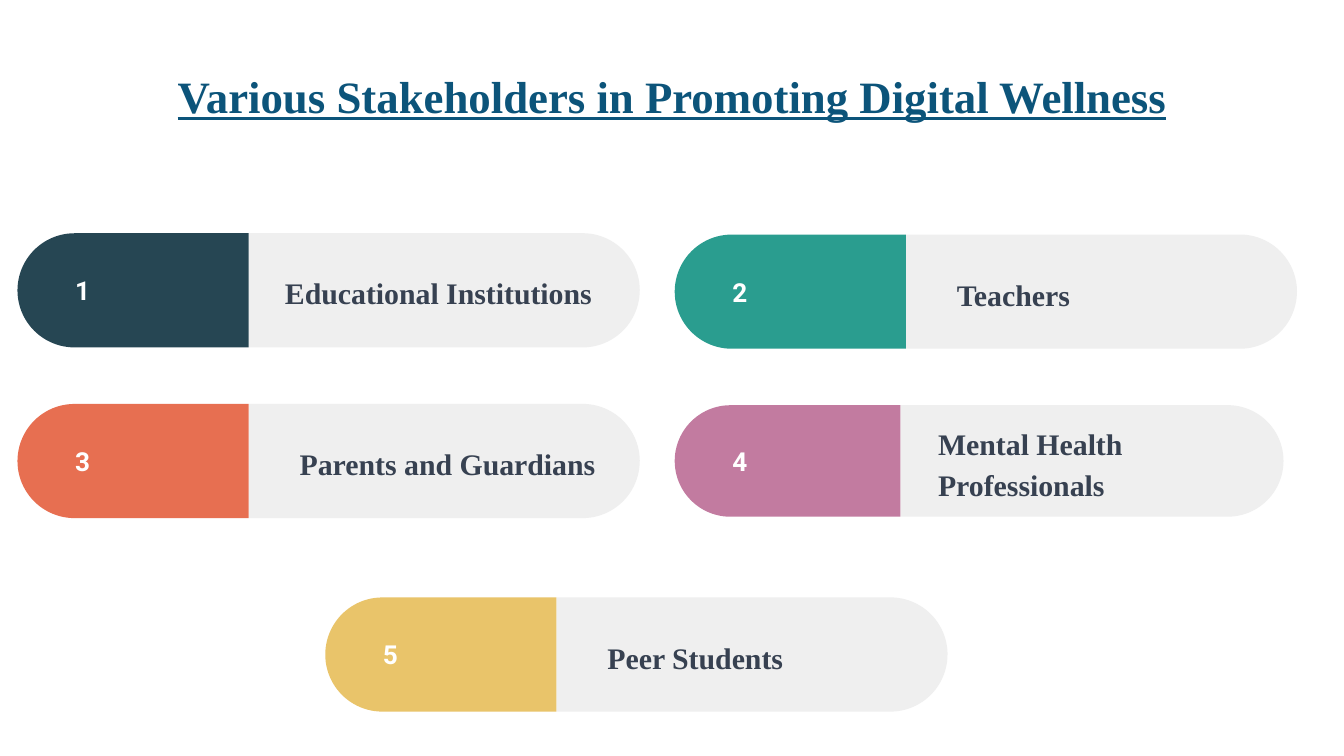
from dataclasses import dataclass

from pptx import Presentation
from pptx.dml.color import RGBColor as Rgb
from pptx.enum.shapes import MSO_SHAPE as Shape
from pptx.enum.text import MSO_ANCHOR as Anchor, PP_ALIGN as Align
from pptx.slide import Slide
from pptx.util import Inches, Pt

COLORS = {
    "title": "0C547A",
    "label": "374151",
    "number": "FFFFFF",
    "bar": "EFEFEF",
    "navy": "264653",
    "teal": "2A9D8F",
    "coral": "E76F51",
    "mauve": "C27BA0",
    "gold": "E9C46A",
}
SERIF = "Times New Roman"


@dataclass
class Card:
    label: str
    color: str
    left: float
    mid: float
    inset: float = 1.9
    wide: float = 2.8
    high: float = 0.85
    cap: float = 1.72
    bar: float = 2.91
    plate: str = ""


@dataclass
class Style:
    font: str
    size: int
    color: str
    pad: float = 0.1
    align: Align = Align.LEFT
    space: float = 1.0
    under: bool = False


TITLE = Style(SERIF, 24, "title", align=Align.CENTER, under=True)
LABEL = Style(SERIF, 16, "label", pad=0.2, space=1.15)
NUMBER = Style("Roboto", 14, "number")

CARDS = [
    Card("Educational Institutions", "navy", 0.13, 2.16, inset=1.79, wide=2.91),
    Card("Teachers", "teal", 5.02, 2.17),
    Card("Parents and Guardians", "coral", 0.13, 3.43),
    Card("Mental Health Professionals", "mauve", 5.02, 3.43, inset=1.76,
         wide=2.91, high=0.83, cap=1.68, bar=2.85, plate="mauve"),
    Card("Peer Students", "gold", 2.42, 4.87),
]


def add_text(slide: Slide, text: str, style: Style, left: float, mid: float,
             wide: float, high: float, plate: str = "") -> None:
    """Add text centred vertically on mid, on a filled plate if one is named."""
    place = (Inches(left), Inches(mid - high / 2), Inches(wide), Inches(high))
    if plate:
        box = slide.shapes.add_shape(Shape.RECTANGLE, *place)
        box.shadow.inherit = False
        box.fill.solid()
        box.fill.fore_color.rgb = Rgb.from_string(COLORS[plate])
        box.line.fill.background()
    else:
        box = slide.shapes.add_textbox(*place)
    frame = box.text_frame
    frame.word_wrap = True
    frame.vertical_anchor = Anchor.MIDDLE
    frame.margin_left = frame.margin_right = Inches(style.pad)
    frame.margin_top = frame.margin_bottom = Inches(0.1)
    frame.text = text
    para = frame.paragraphs[0]
    para.alignment = style.align
    para.line_spacing = style.space
    font = para.runs[0].font
    font.name = style.font
    font.size = Pt(style.size)
    font.bold = True
    font.underline = style.under
    font.color.rgb = Rgb.from_string(COLORS[style.color])


def add_half(slide: Slide, color: str, left: float, mid: float,
             long: float, high: float, turn: int) -> None:
    """Add one half of a pill, turned so its round end faces outwards."""
    half = slide.shapes.add_shape(
        Shape.ROUND_2_SAME_RECTANGLE,
        Inches(left + (long - high) / 2), Inches(mid - long / 2),
        Inches(high), Inches(long))
    half.rotation = turn
    half.adjustments[0] = 0.5
    half.adjustments[1] = 0
    half.shadow.inherit = False
    half.fill.solid()
    half.fill.fore_color.rgb = Rgb.from_string(COLORS[color])
    half.line.fill.background()


def add_card(slide: Slide, card: Card, number: int) -> None:
    """Add a numbered pill with its label."""
    add_half(slide, "bar", card.left + card.cap, card.mid,
             card.bar, card.high, 90)
    add_half(slide, card.color, card.left, card.mid, card.cap, card.high, 270)
    add_text(slide, card.label, LABEL, card.left + card.inset, card.mid,
             card.wide, 0.82)
    add_text(slide, str(number), NUMBER, card.left + 0.33, card.mid,
             1.05, 0.52, card.plate)


def main() -> None:
    """Build the slide and save it."""
    deck = Presentation()
    deck.slide_width = Inches(10)
    deck.slide_height = deck.slide_width * 9 // 16
    slide = deck.slides.add_slide(deck.slide_layouts[6])
    add_text(slide, "Various Stakeholders in Promoting Digital Wellness",
             TITLE, 0.5, 0.71, 9, 0.53)
    for number, card in enumerate(CARDS, 1):
        add_card(slide, card, number)
    deck.save("out.pptx")


if __name__ == "__main__":
    main()
